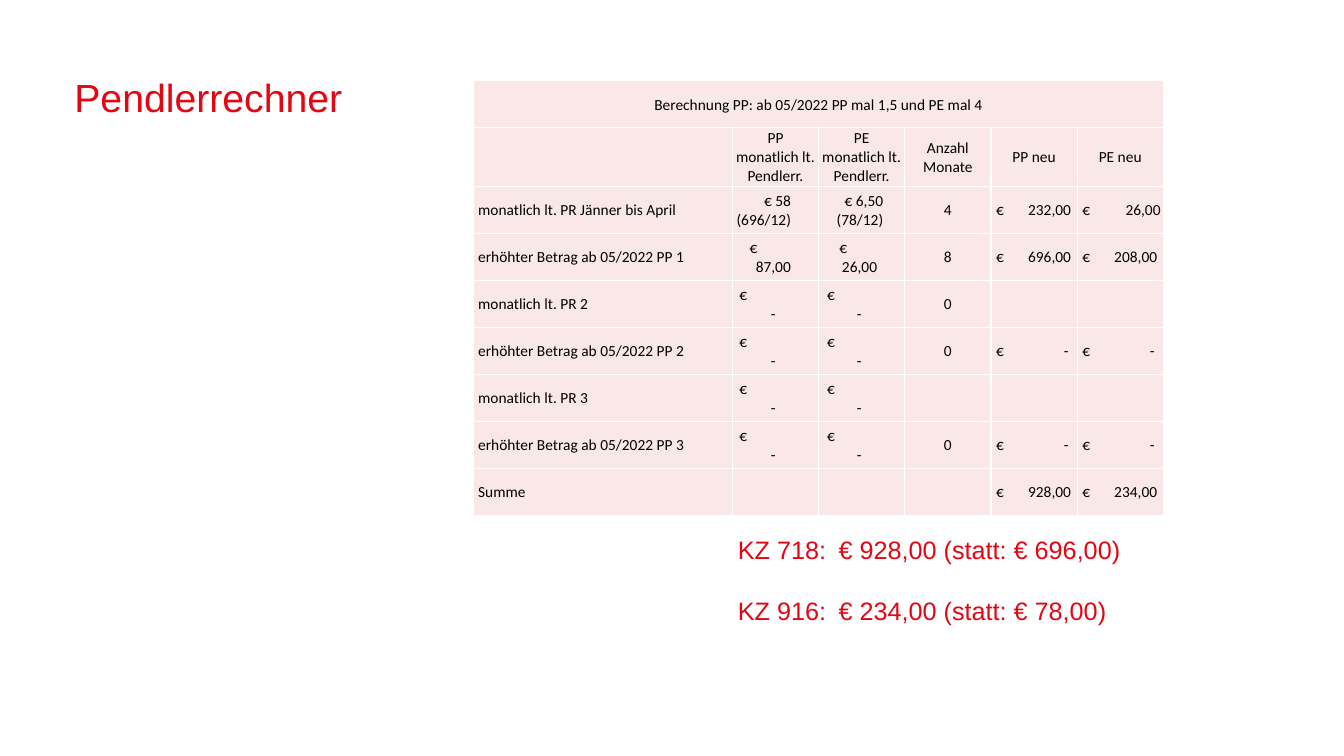
"""Build the commuter allowance slide with its calculation table and results."""
from dataclasses import dataclass, field

from lxml import etree
from pptx import Presentation, util as u
from pptx.dml.color import RGBColor
from pptx.enum import text as t
from pptx.oxml import ns


@dataclass(frozen=True)
class Theme:
    red: str = "E30613"
    black: str = "000000"
    rose: str = "FAE7E7"
    white: str = "FFFFFF"
    heading_font: str = "Arial"
    table_font: str = "Calibri"
    title_size: int = 28
    result_size: int = 18
    table_size: int = 11
    border_width: int = 1


@dataclass(frozen=True)
class Area:
    """Position and size in percent of the slide."""
    left: float
    top: float
    width: float
    height: float

    def box(self) -> tuple[int, int, int, int]:
        return (int(SLIDE_W * self.left / 100), int(SLIDE_H * self.top / 100),
                int(SLIDE_W * self.width / 100), int(SLIDE_H * self.height / 100))


@dataclass(frozen=True)
class Entry:
    """Cell content; insets and tab are shares of one grid column."""
    wording: str = ""
    align: t.PP_ALIGN = t.PP_ALIGN.CENTER
    left: float = 0.01
    right: float = 0.01
    tab: float = 0


@dataclass(frozen=True)
class Line:
    label: str
    amounts: list[Entry] = field(default_factory=list)


THEME = Theme()
SLIDE_W, SLIDE_H = u.Inches(13.33), u.Inches(7.5)
TITLE_AREA = Area(4.8, 9.07, 27.9, 41.6)
TABLE_AREA = Area(35.26, 10.7, 51.3, 57.5)
RESULT_AREA = Area(54.16, 70, 36, 13.47)
COLUMN_SPANS = [3, 1, 1, 1, 1, 1]
HEADER_SHARE = 0.135


def label(wording: str) -> Entry:
    return Entry(wording, t.PP_ALIGN.LEFT, left=0.05)


def monthly(amount: str, right: float) -> Entry:
    return Entry(amount, t.PP_ALIGN.RIGHT, right=right)


def stacked(amount: str, left: float, edge: float) -> Entry:
    return Entry(f"€\v\t{amount}", t.PP_ALIGN.LEFT, left, tab=edge - left)


def total(amount: str, edge: float = 0.93) -> Entry:
    return Entry(f"€\t{amount}", t.PP_ALIGN.LEFT, 0.06, tab=edge - 0.06)


BLANK = Entry()
NO_MONTHLY = [stacked("-", 0.08, 0.5), stacked("-", 0.1, 0.5)]
NO_TOTALS = [total("-", 0.9)] * 2
CAPTION = "Berechnung PP: ab 05/2022 PP mal 1,5 und PE mal 4"
HEADINGS = ["", "PP\vmonatlich lt.\vPendlerr.", "PE\vmonatlich lt.\vPendlerr.",
            "Anzahl\vMonate", "PP neu", "PE neu"]
LINES = [
    Line("monatlich lt. PR Jänner bis April",
         [monthly("€ 58\v(696/12)", 0.32), monthly("€ 6,50\v(78/12)", 0.25),
          Entry("4"), total("232,00"), total("26,00", 0.97)]),
    Line("erhöhter Betrag ab 05/2022 PP 1",
         [stacked("87,00", 0.2, 0.68), stacked("26,00", 0.24, 0.68),
          Entry("8"), total("696,00"), total("208,00")]),
    Line("monatlich lt. PR 2", [*NO_MONTHLY, Entry("0"), BLANK, BLANK]),
    Line("erhöhter Betrag ab 05/2022 PP 2", [*NO_MONTHLY, Entry("0"), *NO_TOTALS]),
    Line("monatlich lt. PR 3", [*NO_MONTHLY, BLANK, BLANK, BLANK]),
    Line("erhöhter Betrag ab 05/2022 PP 3", [*NO_MONTHLY, Entry("0"), *NO_TOTALS]),
    Line("Summe", [BLANK, BLANK, BLANK, total("928,00"), total("234,00")]),
]
RESULTS = ["KZ 718:\t€ 928,00 (statt: € 696,00)",
           "KZ 916:\t€ 234,00 (statt: € 78,00)"]


def set_font(paragraph, family: str, size: int, color: str) -> None:
    paragraph.font.name = family
    paragraph.font.size = u.Pt(size)
    paragraph.font.color.rgb = RGBColor.from_string(color)


def add_tab(paragraph, position: int, align: str) -> None:
    stops = etree.SubElement(paragraph._p.get_or_add_pPr(), ns.qn("a:tabLst"))
    etree.SubElement(stops, ns.qn("a:tab"), pos=str(int(position)), algn=align)


def add_borders(cell) -> None:
    properties = cell._tc.get_or_add_tcPr()
    for index, side in enumerate(("a:lnL", "a:lnR", "a:lnT", "a:lnB")):
        border = etree.Element(ns.qn(side), w=str(u.Pt(THEME.border_width)))
        fill = etree.SubElement(border, ns.qn("a:solidFill"))
        etree.SubElement(fill, ns.qn("a:srgbClr"), val=THEME.white)
        properties.insert(index, border)


def fill_cell(cell, entry: Entry, column_width: int) -> None:
    cell.fill.solid()
    cell.fill.fore_color.rgb = RGBColor.from_string(THEME.rose)
    add_borders(cell)
    cell.vertical_anchor = t.MSO_ANCHOR.MIDDLE
    cell.margin_left = int(column_width * entry.left)
    cell.margin_right = int(column_width * entry.right)
    cell.margin_top, cell.margin_bottom = u.Inches(0.01), 0
    paragraph = cell.text_frame.paragraphs[0]
    paragraph.text = entry.wording
    paragraph.alignment = entry.align
    if entry.tab:
        add_tab(paragraph, column_width * entry.tab, "r")
    set_font(paragraph, THEME.table_font, THEME.table_size, THEME.black)


def add_calculation(slide) -> None:
    grid = [[Entry(CAPTION)] + [BLANK] * 5,
            [Entry(heading) for heading in HEADINGS],
            *([label(line.label), *line.amounts] for line in LINES)]
    left, top, width, height = TABLE_AREA.box()
    table = slide.shapes.add_table(len(grid), len(COLUMN_SPANS),
                                   left, top, width, height).table
    table.first_row = table.horz_banding = False
    unit = width // sum(COLUMN_SPANS)
    for column, span in zip(table.columns, COLUMN_SPANS):
        column.width = unit * span
    header_height = int(height * HEADER_SHARE)
    for index, row in enumerate(table.rows):
        row.height = header_height if index == 1 else (height - header_height) // (len(grid) - 1)
    for row, entries in zip(table.rows, grid):
        for cell, entry in zip(row.cells, entries):
            fill_cell(cell, entry, unit)
    table.cell(0, 0).merge(table.cell(0, len(COLUMN_SPANS) - 1))


def add_lines(slide, area: Area, lines: list[str], size: int) -> None:
    frame = slide.shapes.add_textbox(*area.box()).text_frame
    frame.word_wrap = True
    for index, line in enumerate(lines):
        paragraph = frame.add_paragraph() if index else frame.paragraphs[0]
        paragraph.text = line
        if index:
            paragraph.space_before = u.Pt(22)
        if "\t" in line:
            add_tab(paragraph, u.Inches(1), "l")
        set_font(paragraph, THEME.heading_font, size, THEME.red)


def main() -> None:
    deck = Presentation()
    deck.slide_width, deck.slide_height = SLIDE_W, SLIDE_H
    slide = deck.slides.add_slide(deck.slide_layouts[6])
    add_calculation(slide)
    add_lines(slide, RESULT_AREA, RESULTS, THEME.result_size)
    add_lines(slide, TITLE_AREA, ["Pendlerrechner"], THEME.title_size)
    deck.save("out.pptx")


if __name__ == "__main__":
    main()
